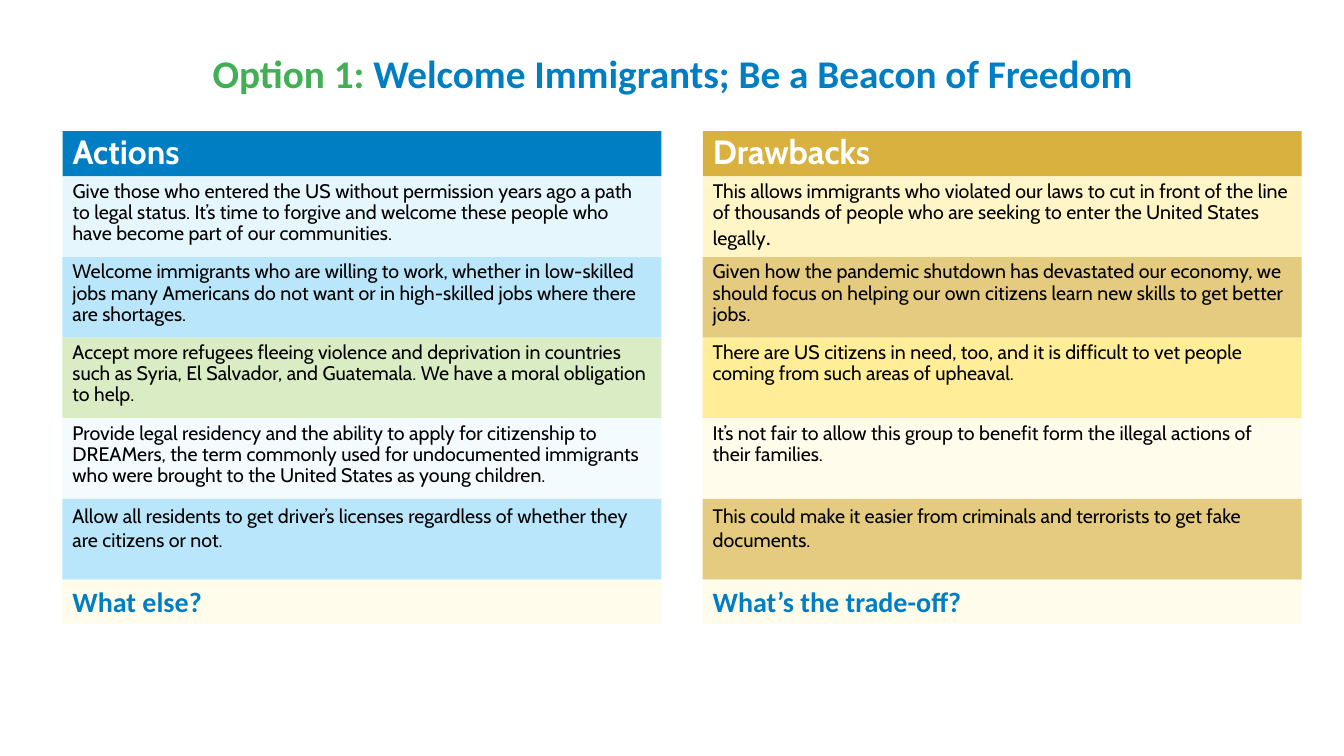
"""Builds the Option 1 slide: actions beside their drawbacks."""
from dataclasses import dataclass

from lxml import etree
from pptx import Presentation
from pptx.dml.color import RGBColor
from pptx.enum.shapes import MSO_SHAPE
from pptx.enum.text import MSO_ANCHOR, MSO_AUTO_SIZE, PP_ALIGN
from pptx.oxml.ns import qn
from pptx.util import Inches, Pt

RECTANGLE = MSO_SHAPE.RECTANGLE
TOP, MIDDLE, BOTTOM = MSO_ANCHOR.TOP, MSO_ANCHOR.MIDDLE, MSO_ANCHOR.BOTTOM
LEFT, CENTER = PP_ALIGN.LEFT, PP_ALIGN.CENTER
NO_FIT = MSO_AUTO_SIZE.NONE

COLUMN_TOP, COLUMN_WIDTH = 1.3, 5.94
HEADING_HEIGHT, ROW_HEIGHT, QUESTION_HEIGHT = 0.45, 0.8, 0.44


@dataclass(frozen=True)
class Theme:
    """Colours, fonts and type sizes."""
    blue: str = "007EC4"
    green: str = "42AF54"
    gold: str = "D8B13F"
    cream: str = "FFFCEC"
    white: str = "FFFFFF"
    black: str = "000000"
    action_fills: tuple = ("E6F6FD", "B9E6FB", "DAECC3", "F4FBFF", "B9E6FB")
    drawback_fills: tuple = ("FFF5C6", "E5CB7F", "FFED97", "FFFCEC", "E5CB7F")
    text_font: str = "Cabin"
    accent_font: str = "Calibri"
    title_size: int = 28
    heading_size: int = 24
    question_size: int = 20
    stop_size: int = 18
    text_size: int = 14


class Page:
    """Holds the theme and the current slide."""

    def __init__(self, slide, theme):
        self.slide = slide
        self.theme = theme
        self.holders = {box.placeholder_format.idx: box for box in slide.placeholders}

    def place(self, box, left, top, width, height):
        box.left, box.top = Inches(left), Inches(top)
        box.width, box.height = Inches(width), Inches(height)

    def set_text(self, box, parts, font, size, color, bold=False, anchor=TOP,
                 align=LEFT, spacing=0.9):
        frame = box.text_frame
        frame.word_wrap = True
        frame.auto_size = NO_FIT
        frame.vertical_anchor = anchor
        para = frame.paragraphs[0]
        para.alignment = align
        para.line_spacing = spacing
        para.font.name = font
        para.font.size = Pt(size)
        para.font.bold = bold
        para.font.color.rgb = RGBColor.from_string(color)
        for part in parts:
            para.add_run().text = part
        return para

    def title(self, lead, rest):
        theme = self.theme
        box = self.slide.shapes.title
        self.place(box, 0.92, 0.4, 11.5, 0.7)
        para = self.set_text(box, (lead, rest), theme.accent_font, theme.title_size,
                             theme.blue, True, MIDDLE, CENTER)
        para.runs[0].font.color.rgb = RGBColor.from_string(theme.green)

    def band(self, holder, left, top, height, fill, text, *style, **layout):
        box = self.holders.get(holder)
        if box is None:
            box = self.slide.shapes.add_shape(RECTANGLE, 0, 0, 0, 0)
            box.shadow.inherit = False
        self.place(box, left, top, COLUMN_WIDTH, height)
        box.fill.solid()
        box.fill.fore_color.rgb = RGBColor.from_string(fill)
        box.line.fill.background()
        para = self.set_text(box, (text,), *style, **layout)
        if box.is_placeholder:
            self.clear_bullet(para)
        return para

    def clear_bullet(self, para):
        properties = para._p.get_or_add_pPr()
        properties.set("marL", "0")
        properties.set("indent", "0")
        properties.find(qn("a:defRPr")).addprevious(etree.Element(qn("a:buNone")))

    def column(self, left, holder, heading, heading_fill, rows, fills, question):
        theme = self.theme
        self.band(holder, left, COLUMN_TOP, HEADING_HEIGHT, heading_fill, heading,
                  theme.text_font, theme.heading_size, theme.white, True, anchor=BOTTOM)
        top = COLUMN_TOP + HEADING_HEIGHT
        paras = []
        for index, (text, fill) in enumerate(zip(rows, fills)):
            last = index == len(rows) - 1
            paras.append(self.band(holder + 1 if index == 0 else None, left, top,
                                   ROW_HEIGHT, fill, text, theme.text_font,
                                   theme.text_size, theme.black,
                                   spacing=1.0 if last else 0.9))
            top += ROW_HEIGHT
        self.band(None, left, top, QUESTION_HEIGHT, theme.cream, question,
                  theme.accent_font, theme.question_size, theme.blue, True, spacing=1.0)
        return paras


ACTIONS = (
    "Give those who entered the US without permission years ago a path to legal status. "
    "It’s time to forgive and welcome these people who have become part of our communities.",
    "Welcome immigrants who are willing to work, whether in low-skilled jobs many "
    "Americans do not want or in high-skilled jobs where there are shortages.",
    "Accept more refugees fleeing violence and deprivation in countries such as Syria, "
    "El Salvador, and Guatemala. We have a moral obligation to help.",
    "Provide legal residency and the ability to apply for citizenship to DREAMers, the "
    "term commonly used for undocumented immigrants who were brought to the United States "
    "as young children.",
    "Allow all residents to get driver’s licenses regardless of whether they are citizens "
    "or not.",
)
DRAWBACKS = (
    "This allows immigrants who violated our laws to cut in front of the line of thousands "
    "of people who are seeking to enter the United States legally",
    "Given how the pandemic shutdown has devastated our economy, we should focus on helping "
    "our own citizens learn new skills to get better jobs.",
    "There are US citizens in need, too, and it is difficult to vet people coming from such "
    "areas of upheaval.",
    "It’s not fair to allow this group to benefit form the illegal actions of their families.",
    "This could make it easier from criminals and terrorists to get fake documents.",
)


def main():
    deck = Presentation()
    deck.slide_width, deck.slide_height = Inches(13.33), Inches(7.5)
    theme = Theme()
    comparison = deck.slide_layouts.get_by_name("Comparison")
    page = Page(deck.slides.add_slide(comparison), theme)
    page.title("Option 1: ", "Welcome Immigrants; Be a Beacon of Freedom")
    page.column(0.62, 1, "Actions", theme.blue, ACTIONS, theme.action_fills, "What else?")
    drawbacks = page.column(6.97, 3, "Drawbacks", theme.gold, DRAWBACKS,
                            theme.drawback_fills, "What’s the trade-off?")
    stop = drawbacks[0].add_run()
    stop.text = "."
    stop.font.size = Pt(theme.stop_size)
    deck.save("out.pptx")


if __name__ == "__main__":
    main()
